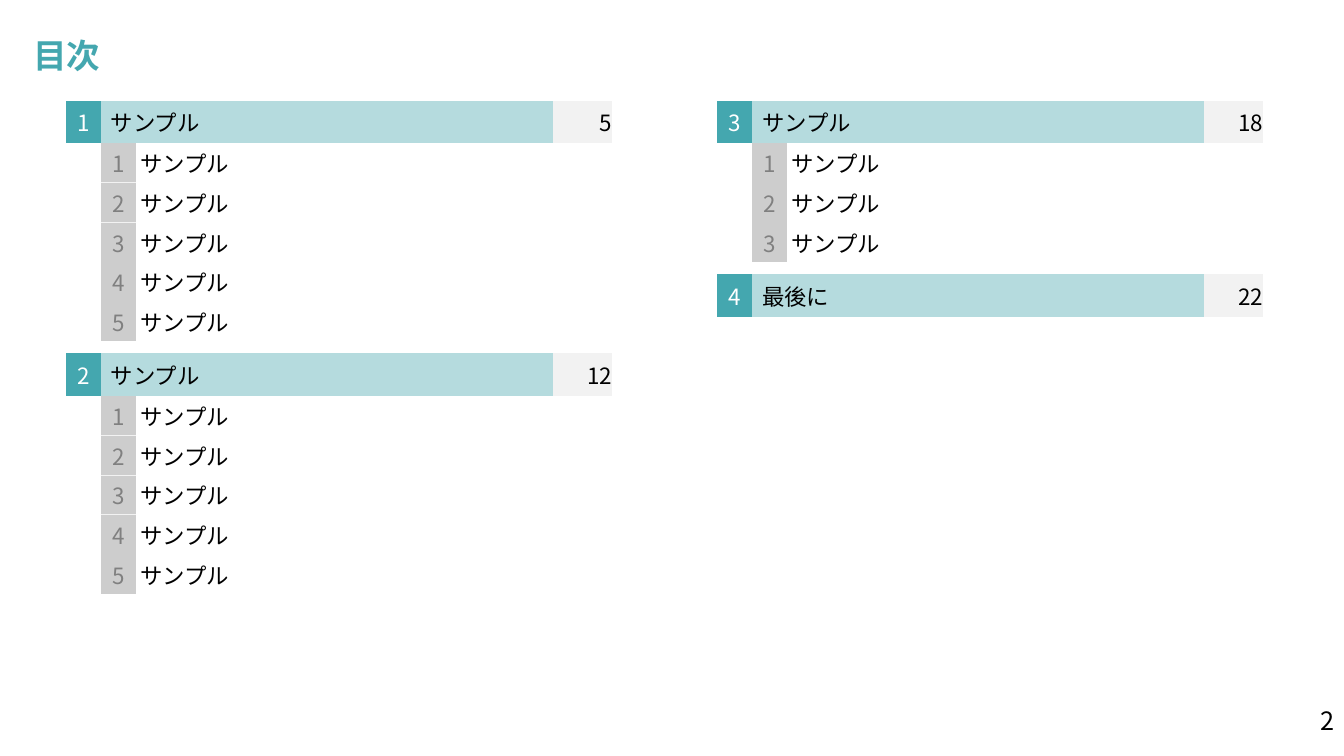
from dataclasses import dataclass

from lxml import etree
from pptx import Presentation
from pptx import util as u
from pptx.dml.color import RGBColor
from pptx.enum import text
from pptx.oxml import ns


@dataclass(frozen=True)
class Theme:
    font: str = "Noto Sans CJK JP"
    accent: str = "44A7AF"
    accent_light: str = "B5DBDE"
    page_fill: str = "F2F2F2"
    number_fill: str = "CDCDCD"
    number_text: str = "808080"
    black: str = "000000"
    white: str = "FFFFFF"
    title_size: int = 24
    entry_size: int = 16
    page_size: int = 18


@dataclass(frozen=True)
class Section:
    number: int
    title: str
    page: int
    topics: int = 0
    dividers: tuple = ()  # topic numbers with a line below


THEME = Theme()
TOPIC = "サンプル"
NO_STYLE = "{2D5ABB26-0587-4C30-8999-92F81FD0307C}"
LEFT, CENTER, RIGHT = text.PP_ALIGN.LEFT, text.PP_ALIGN.CENTER, text.PP_ALIGN.RIGHT

COLUMN_WIDTHS = (0.35, 0.35, 4.13, 0.59)
HEADING_HEIGHT = 0.42
TOPIC_HEIGHT = 1 / 2.54  # one centimetre
GAP_HEIGHT = 0.12
TABLE_TOP = 1

LEFT_SECTIONS = (
    Section(1, "サンプル", 5, topics=5, dividers=(1,)),
    Section(2, "サンプル", 12, topics=5, dividers=(1, 2)),
)
RIGHT_SECTIONS = (
    Section(3, "サンプル", 18, topics=3),
    Section(4, "最後に", 22),
)


# Text
def add_span(para, words, size, color, bold=False, align=LEFT):
    para.alignment = align
    span = para.add_run()
    span.text = str(words)
    span.font.size = u.Pt(size)
    span.font.bold = bold
    span.font.color.rgb = RGBColor.from_string(color)
    span.font.name = THEME.font
    east_asian = etree.SubElement(span.font._element, ns.qn("a:ea"))
    east_asian.set("typeface", THEME.font)


def set_margins(item, left, top, right, bottom):
    item.margin_left, item.margin_top = u.Inches(left), u.Inches(top)
    item.margin_right, item.margin_bottom = u.Inches(right), u.Inches(bottom)


def add_title(page, words):
    title = page.shapes.title
    title.left, title.top = u.Inches(0.33), u.Inches(0.28)
    title.width, title.height = u.Inches(0.87), u.Inches(0.59)
    frame = title.text_frame
    frame.vertical_anchor = text.MSO_ANCHOR.MIDDLE
    set_margins(frame, 0, 0.05, 0, 0.05)
    frame.paragraphs[0].line_spacing = 0.9
    add_span(frame.paragraphs[0], words, THEME.title_size, THEME.accent, bold=True)


def add_page_number(page, number):
    box = page.shapes.add_textbox(u.Inches(10.33), u.Inches(6.95), u.Inches(3), u.Inches(0.4))
    box.text_frame.word_wrap = True
    add_span(box.text_frame.paragraphs[0], number, THEME.page_size, THEME.black, align=RIGHT)


# Table cells
def clear_cell(cell):
    """Leave an empty cell that does not stretch its row."""
    cell.fill.background()
    set_margins(cell, 0, 0, 0, 0)
    end = etree.SubElement(cell.text_frame.paragraphs[0]._p, ns.qn("a:endParaRPr"))
    end.set("sz", "100")


def fill_cell(cell, words, color, fill=None, align=LEFT, margins=(0.04, 0, 0, 0)):
    if fill:
        cell.fill.solid()
        cell.fill.fore_color.rgb = RGBColor.from_string(fill)
    else:
        cell.fill.background()
    cell.vertical_anchor = text.MSO_ANCHOR.MIDDLE
    set_margins(cell, *margins)
    add_span(cell.text_frame.paragraphs[0], words, THEME.entry_size, color, align=align)


def add_border(cell, side):
    line = etree.Element(ns.qn(f"a:{side}"), w=str(u.Pt(1)))
    fill = etree.SubElement(line, ns.qn("a:solidFill"))
    etree.SubElement(fill, ns.qn("a:srgbClr"), val=THEME.page_fill)
    cell._tc.get_or_add_tcPr().insert(0, line)


# Table rows
def write_heading(table, row, section):
    number, title, covered, page_cell = (table.cell(row, col) for col in range(4))
    title.merge(covered)
    fill_cell(number, section.number, THEME.white, THEME.accent, CENTER, (0, 0, 0, 0))
    fill_cell(title, section.title, THEME.black, THEME.accent_light,
              margins=(0.1, 0.05, 0.1, 0.05))
    clear_cell(covered)
    fill_cell(page_cell, section.page, THEME.black, THEME.page_fill, RIGHT)


def write_topic(table, row, section, topic):
    indent, number, title, page_cell = (table.cell(row, col) for col in range(4))
    clear_cell(indent)
    clear_cell(page_cell)
    fill_cell(number, topic, THEME.number_text, THEME.number_fill, CENTER, (0, 0, 0, 0))
    fill_cell(title, TOPIC, THEME.black)
    if topic in section.dividers:
        add_border(number, "lnB")
    if topic - 1 in section.dividers:
        add_border(number, "lnT")


def write_gap(table, row):
    for col in range(4):
        clear_cell(table.cell(row, col))


def add_contents(page, left, sections):
    # One row per heading and topic, with a gap after each list of topics
    rows = []
    for section in sections:
        rows.append((HEADING_HEIGHT, write_heading, (section,)))
        for topic in range(1, section.topics + 1):
            rows.append((TOPIC_HEIGHT, write_topic, (section, topic)))
        if section.topics:
            rows.append((GAP_HEIGHT, write_gap, ()))

    frame = page.shapes.add_table(
        len(rows), len(COLUMN_WIDTHS), u.Inches(left), u.Inches(TABLE_TOP),
        u.Inches(sum(COLUMN_WIDTHS)), u.Inches(sum(row[0] for row in rows)))
    table = frame.table
    table.first_row = table.horz_banding = False
    table._tbl.tblPr.find(ns.qn("a:tableStyleId")).text = NO_STYLE
    for column, width in zip(table.columns, COLUMN_WIDTHS):
        column.width = u.Inches(width)
    for index, (height, write, details) in enumerate(rows):
        table.rows[index].height = u.Inches(height)
        write(table, index, *details)


def main():
    deck = Presentation()
    deck.slide_width, deck.slide_height = u.Inches(13.33), u.Inches(7.5)
    page = deck.slides.add_slide(deck.slide_layouts[5])
    add_title(page, "目次")
    add_contents(page, 0.65, LEFT_SECTIONS)
    add_contents(page, 7.11, RIGHT_SECTIONS)
    add_page_number(page, 2)
    deck.save("out.pptx")


if __name__ == "__main__":
    main()
